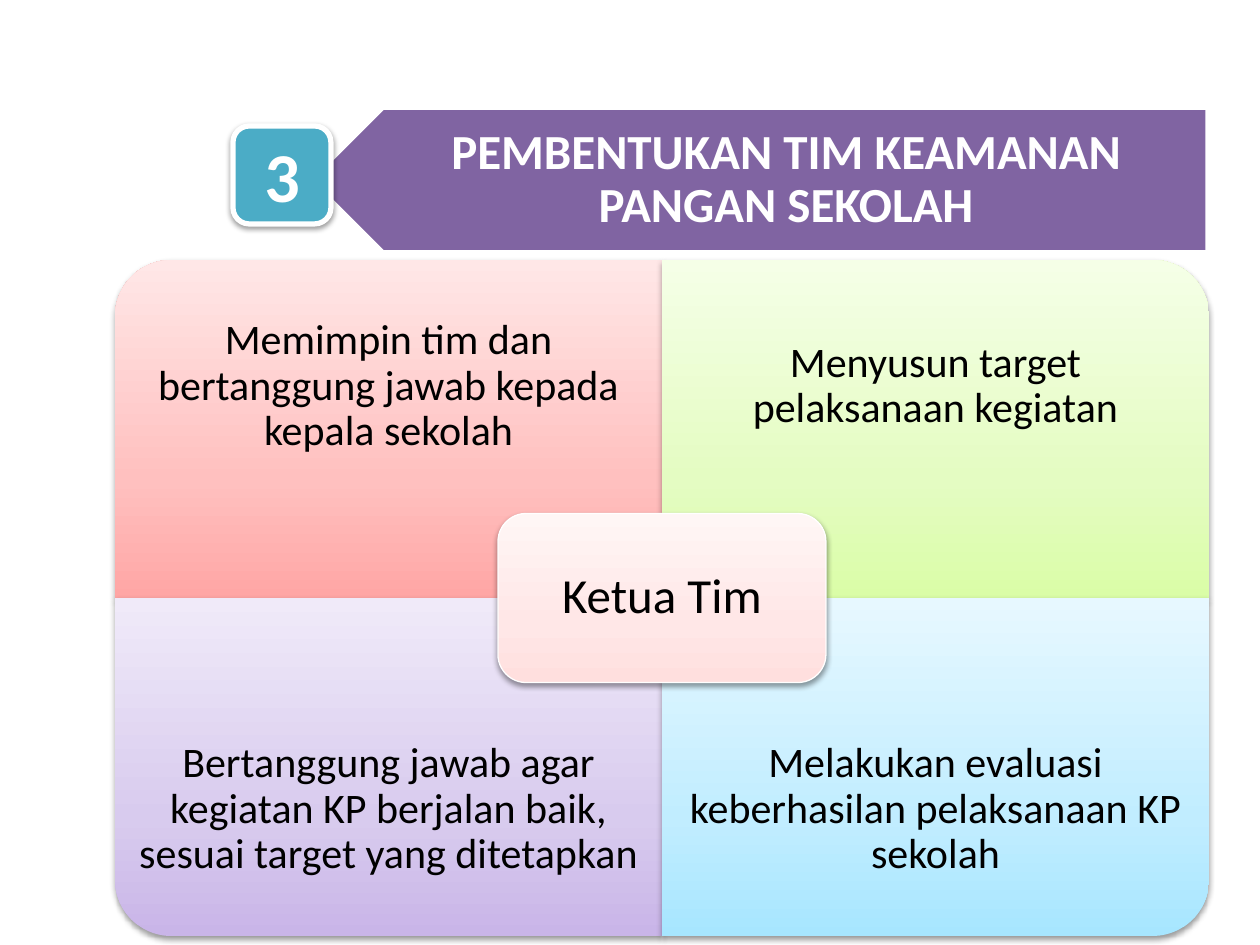
"""Build the slide on forming the school food safety team and its leader's duties."""
from pptx import Presentation
from pptx import util as u
from pptx.dml.color import RGBColor
from pptx.enum import shapes, text
from pptx.oxml import parse_xml
from pptx.oxml.ns import nsdecls, qn

SCALE = 914400 / 126
FONT = "Calibri"
COLOURS = {"white": "FFFFFF", "black": "000000", "banner": "8064A2", "badge": "4BACC6"}
TITLE = "PEMBENTUKAN TIM KEAMANAN PANGAN SEKOLAH"
NUMBER = "3"
LEADER = ("Ketua Tim", ("FFDFDE", "FFE7E7", "FFF6F5"))
DUTIES = [
    ("Memimpin tim dan bertanggung jawab kepada kepala sekolah",
     ("FFA6A5", "FFC0BF", "FFE7E7"), 270),
    ("Menyusun target pelaksanaan kegiatan",
     ("DAFDA7", "E4FCC2", "F5FFE7"), 0),
    ("Bertanggung jawab agar kegiatan KP berjalan baik, sesuai target yang ditetapkan",
     ("C9B5E8", "D8CBEE", "F0EAF9"), 180),
    ("Melakukan evaluasi keberhasilan pelaksanaan KP sekolah",
     ("A7E6FF", "C1EDFF", "E7F8FF"), 90),
]
STOPS = (0, 35, 100)
GRID_LEFT, GRID_TOP, CELL_WIDTH, CELL_HEIGHT = 115, 260, 547, 338
TEXT_HEIGHT = 253
LEADER_WIDTH, LEADER_HEIGHT = 328, 169
BANNER = (311, 108, 896, 144)
TITLE_BOX = (341, 108, 866, 144)
BADGE = (233, 126, 98, 98)


def px(value):
    return u.Emu(round(value * SCALE))


def colour(name):
    return RGBColor.from_string(COLOURS[name])


def add_shape(slide, kind, box, fill=None, line=None, rotation=0):
    shape = slide.shapes.add_shape(kind, *map(px, box))
    shape.rotation = rotation
    shape.shadow.inherit = False
    if fill:
        shape.fill.solid()
        shape.fill.fore_color.rgb = colour(fill)
    if line:
        shape.line.color.rgb = colour("white")
        shape.line.width = u.Pt(line)
    else:
        shape.line.fill.background()
    return shape


def set_gradient(shape, shades):
    stops = "".join(f'<a:gs pos="{stop * 1000}"><a:srgbClr val="{shade}"/></a:gs>'
                    for stop, shade in zip(STOPS, shades))
    shape.fill.background()
    properties = shape._element.spPr
    properties.replace(properties.find(qn("a:noFill")), parse_xml(
        f'<a:gradFill rotWithShape="0" {nsdecls("a")}><a:gsLst>{stops}</a:gsLst>'
        '<a:lin ang="16200000" scaled="0"/></a:gradFill>'))


def set_shadow(shape):
    shape._element.spPr.find(qn("a:effectLst")).append(parse_xml(
        f'<a:outerShdw blurRad="40000" dist="20000" dir="5400000" rotWithShape="0" {nsdecls("a")}>'
        f'<a:srgbClr val="{COLOURS["black"]}"><a:alpha val="38000"/></a:srgbClr></a:outerShdw>'))


def write(shape, words, size, name, insets, bold=False, spacing=0.9):
    frame = shape.text_frame
    frame.text = words
    frame.word_wrap = True
    frame.auto_size = text.MSO_AUTO_SIZE.NONE
    frame.vertical_anchor = text.MSO_ANCHOR.MIDDLE
    (frame.margin_left, frame.margin_top,
     frame.margin_right, frame.margin_bottom) = map(px, insets)
    paragraph = frame.paragraphs[0]
    paragraph.alignment = text.PP_ALIGN.CENTER
    paragraph.line_spacing = spacing
    font = paragraph.runs[0].font
    font.name, font.size, font.bold = FONT, u.Pt(size), bold
    font.color.rgb = colour(name)


def add_duty(slide, index, words, shades, rotation):
    row, column = divmod(index, 2)
    left = GRID_LEFT + column * CELL_WIDTH
    top = GRID_TOP + row * CELL_HEIGHT
    width, height = CELL_WIDTH, CELL_HEIGHT
    if rotation % 180:
        width, height = height, width
    box = (left + (CELL_WIDTH - width) / 2, top + (CELL_HEIGHT - height) / 2, width, height)
    cell = add_shape(slide, shapes.MSO_SHAPE.ROUND_1_RECTANGLE, box, rotation=rotation)
    set_gradient(cell, shades)
    set_shadow(cell)
    text_top = top + row * (CELL_HEIGHT - TEXT_HEIGHT)
    label = slide.shapes.add_textbox(*map(px, (left, text_top, CELL_WIDTH, TEXT_HEIGHT)))
    write(label, words, 24, "black", (24,) * 4)


def add_leader(slide):
    words, shades = LEADER
    box = (GRID_LEFT + CELL_WIDTH - LEADER_WIDTH / 2,
           GRID_TOP + CELL_HEIGHT - LEADER_HEIGHT / 2, LEADER_WIDTH, LEADER_HEIGHT)
    leader = add_shape(slide, shapes.MSO_SHAPE.ROUNDED_RECTANGLE, box, line=0.75)
    set_gradient(leader, shades)
    set_shadow(leader)
    write(leader, words, 28, "black", (16,) * 4)


def add_heading(slide):
    add_shape(slide, shapes.MSO_SHAPE.PENTAGON, BANNER, "banner", 2, 180)
    title = slide.shapes.title
    title.left, title.top, title.width, title.height = map(px, TITLE_BOX)
    write(title, TITLE, 28, "white", (44, 10, 20, 10), bold=True)
    slide.shapes._spTree.append(title._element)
    badge = add_shape(slide, shapes.MSO_SHAPE.ROUNDED_RECTANGLE, BADGE, "badge", 3)
    set_shadow(badge)
    write(badge, NUMBER, 40, "white", (12, 6, 12, 6), bold=True, spacing=1.0)


def main():
    presentation = Presentation()
    presentation.slide_width, presentation.slide_height = px(1260), px(945)
    slide = presentation.slides.add_slide(presentation.slide_layouts[5])
    for index, duty in enumerate(DUTIES):
        add_duty(slide, index, *duty)
    add_leader(slide)
    add_heading(slide)
    presentation.save("out.pptx")


if __name__ == "__main__":
    main()
